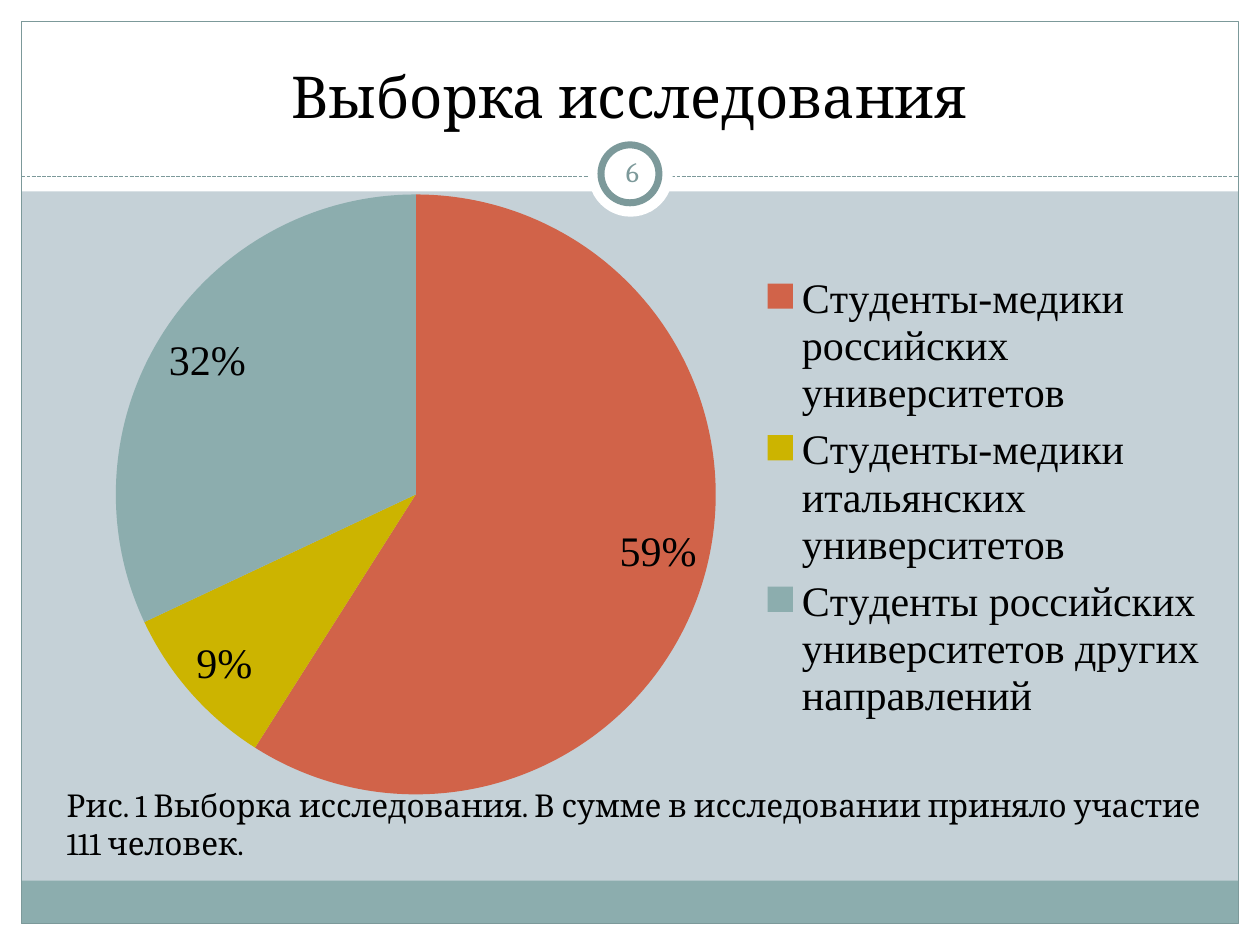
from lxml import etree
from pptx import Presentation
from pptx import util as u
from pptx.chart.data import CategoryChartData
from pptx.dml.color import RGBColor
from pptx.enum import chart as charts, dml, shapes, text
from pptx.oxml import parse_xml
from pptx.oxml.ns import nsdecls, qn

WHITE, BLACK, TEAL, PALE_TEAL = "FFFFFF", "000000", "7C999A", "8CADAE"
WIDTH, HEIGHT, MARGIN = 10, 7.5, 0.17
INNER = WIDTH - 2 * MARGIN
RULE_TOP = 1.4


def color(target, value):
    if hasattr(target, "solid"):
        target.solid()
        target = target.fore_color
    elif hasattr(target, "color"):
        target = target.color
    target.rgb = RGBColor.from_string(value)


def write(shape, words, size, value, alignment, anchor):
    frame = shape.text_frame
    frame.text = words
    frame.word_wrap = True
    frame.vertical_anchor = anchor
    paragraph = frame.paragraphs[0]
    paragraph.alignment = alignment
    font = paragraph.runs[0].font
    font.name, font.size = "Cambria", u.Pt(size)
    color(font, value)


presentation = Presentation()
presentation.slide_width, presentation.slide_height = u.Inches(WIDTH), u.Inches(HEIGHT)
slide = presentation.slides.add_slide(presentation.slide_layouts[5])
color(slide.background.fill, "C5D1D7")

rectangle, oval = shapes.MSO_SHAPE.RECTANGLE, shapes.MSO_SHAPE.OVAL
decorations = [
    (rectangle, 0, HEIGHT - MARGIN, WIDTH, MARGIN, WHITE, None, 0),
    (rectangle, 0, 0, WIDTH, 1.52, WHITE, None, 0),
    (rectangle, 0, 0, MARGIN, HEIGHT, WHITE, None, 0),
    (rectangle, WIDTH - MARGIN, 0, MARGIN, HEIGHT, WHITE, None, 0),
    (rectangle, MARGIN, 6.99, INNER, 0.34, PALE_TEAL, None, 0),
    (rectangle, MARGIN, MARGIN, INNER, HEIGHT - 2 * MARGIN, None, TEAL, 0.75),
    (None, MARGIN, RULE_TOP, INNER, 0, None, TEAL, 0.75),
    (oval, 4.67, 1.05, 0.67, 0.67, WHITE, None, 0),
    (oval, 4.77, 1.15, 0.46, 0.46, WHITE, TEAL, 4),
]
for kind, left, top, width, height, fill, line, weight in decorations:
    box = [u.Inches(length) for length in (left, top, width, height)]
    if kind is None:
        x, y, length, rise = box
        shape = slide.shapes.add_connector(shapes.MSO_CONNECTOR.STRAIGHT, x, y, x + length, y + rise)
        shape.line.dash_style = dml.MSO_LINE.SQUARE_DOT
        etree.SubElement(shape._element.spPr, qn("a:effectLst"))
    else:
        shape = slide.shapes.add_shape(kind, *box)
        shape.shadow.inherit = False
        if fill:
            color(shape.fill, fill)
        else:
            shape.fill.background()
    if line:
        color(shape.line, line)
        shape.line.width = u.Pt(weight)
    else:
        shape.line.fill.background()

title = slide.shapes.title
title.left, title.top, title.width, title.height = (u.Inches(n) for n in (0.33, 0.25, 9.33, 0.83))
write(title, "Выборка исследования", 33, BLACK, text.PP_ALIGN.CENTER, text.MSO_ANCHOR.BOTTOM)
slide.shapes._spTree.append(title._element)

number = slide.shapes.add_textbox(*(u.Inches(n) for n in (4.77, 1.12, 0.5, 0.48)))
write(number, "6", 16, TEAL, text.PP_ALIGN.CENTER, text.MSO_ANCHOR.MIDDLE)
for side in ("left", "top", "right", "bottom"):
    setattr(number.text_frame, f"margin_{side}", u.Inches(0.05))

sample = CategoryChartData()
sample.categories = [
    "Студенты-медики российских университетов",
    "Студенты-медики итальянских университетов",
    "Студенты российских университетов других направлений",
]
sample.add_series("Series 1", (59, 9, 32))
chart_box = [u.Inches(n) for n in (0.42, 1.39, 9.29, 5.12)]
chart = slide.shapes.add_chart(charts.XL_CHART_TYPE.PIE, *chart_box, sample).chart
chart.has_title = False
chart.font.name, chart.font.size = "Times New Roman", u.Pt(24)
color(chart.font, BLACK)
chart.has_legend = True
chart.legend.position = charts.XL_LEGEND_POSITION.RIGHT
chart.legend.include_in_layout = False

pie = chart.plots[0]
pie.vary_by_categories = True
for index, value in enumerate(("D16349", "CCB400", PALE_TEAL)):
    color(pie.series[0].points[index].format.fill, value)
pie.has_data_labels = True
labels = pie.data_labels
labels.show_percentage, labels.show_value = True, False
labels.number_format, labels.number_format_is_linked = "0%", False
labels.position = charts.XL_LABEL_POSITION.INSIDE_END

plot_area = chart._chartSpace.chart.plotArea
for old in plot_area.findall(qn("c:layout")):
    plot_area.remove(old)
legend = chart.legend._element
for old in legend.findall(qn("c:layout")):
    legend.remove(old)
layouts = [
    (plot_area, 0, '<c:layoutTarget val="inner"/>', (0.05, 0.03, 0.52, 0.93)),
    (legend, 1, "", (0.6, 0.14, 0.39, 0.72)),
]
for parent, position, target, shares in layouts:
    modes = '<c:xMode val="edge"/><c:yMode val="edge"/>'
    sizes = "".join(f'<c:{name} val="{share}"/>' for name, share in zip("xywh", shares))
    layout = f'<c:layout {nsdecls("c")}><c:manualLayout>{target}{modes}{sizes}</c:manualLayout></c:layout>'
    parent.insert(position, parse_xml(layout))

caption = slide.shapes.add_textbox(*(u.Inches(n) for n in (0.43, 6.19, 9.29, 0.71)))
write(
    caption,
    "Рис. 1 Выборка исследования. В сумме в исследовании приняло участие 111 человек.",
    18, BLACK, text.PP_ALIGN.LEFT, text.MSO_ANCHOR.TOP,
)

presentation.save("out.pptx")
